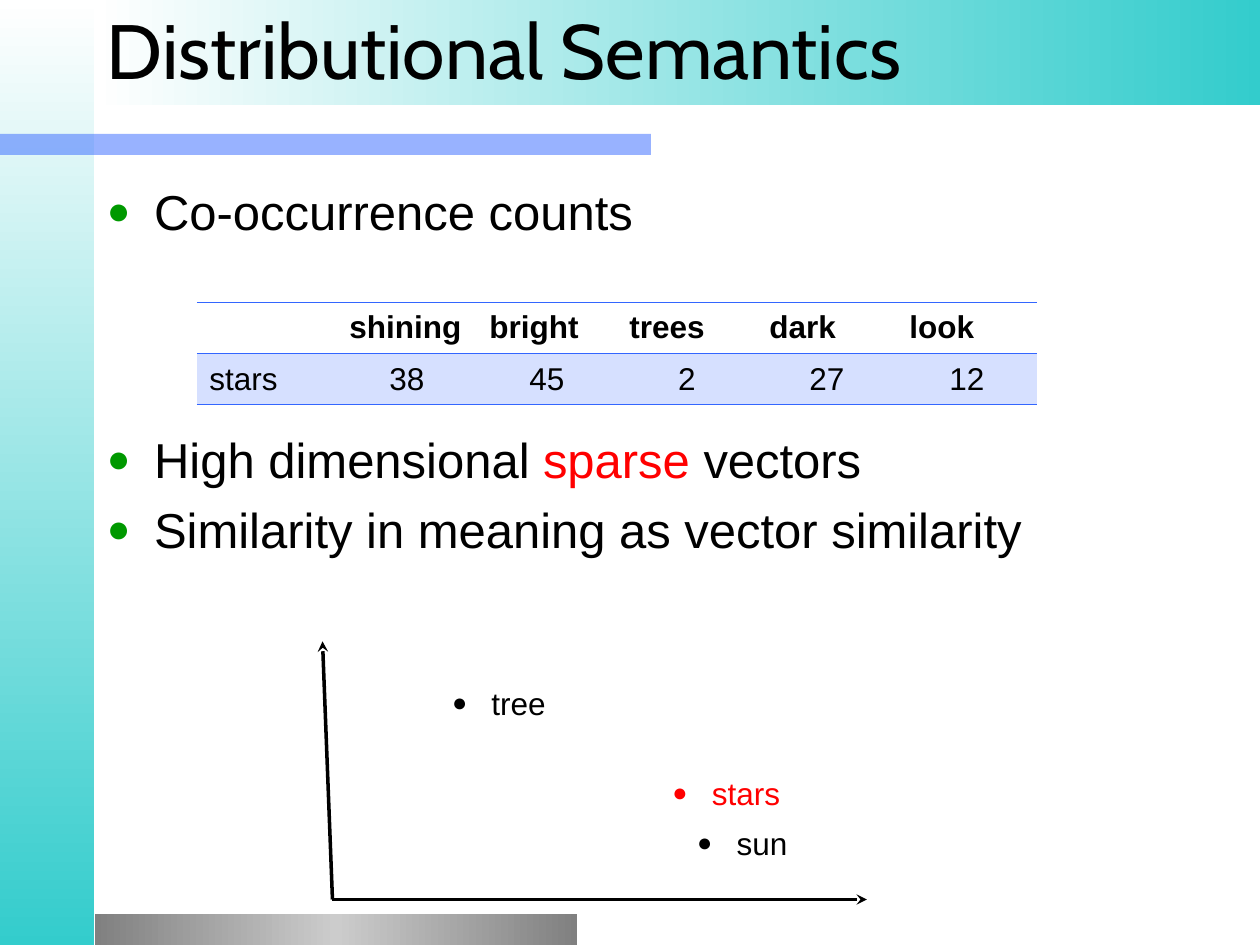
from copy import deepcopy

from lxml import etree
from pptx import Presentation
from pptx.dml.color import RGBColor
from pptx.enum.shapes import MSO_CONNECTOR, MSO_SHAPE
from pptx.enum.text import MSO_ANCHOR, PP_ALIGN
from pptx.oxml import parse_xml
from pptx.oxml.ns import nsdecls, qn
from pptx.util import Pt

BLACK = RGBColor(0x00, 0x00, 0x00)
WHITE = RGBColor(0xFF, 0xFF, 0xFF)
RED = RGBColor(0xFF, 0x00, 0x00)
GREEN = RGBColor(0x00, 0x99, 0x00)
TEAL = RGBColor(0x33, 0xCC, 0xCC)
BLUE = RGBColor(0x33, 0x66, 0xFF)
PALE_BLUE = RGBColor(0xD6, 0xE0, 0xFF)
GREY = RGBColor(0x80, 0x80, 0x80)
LIGHT_GREY = RGBColor(0xCC, 0xCC, 0xCC)


def write(p, runs, size=18, font="Arial", color=BLACK, bold=False,
          align=PP_ALIGN.LEFT, before=0, bullet=None, indent=0):
    """Fill a paragraph with a string or with (text, colour) runs."""
    p.alignment = align
    p.space_before = Pt(before)
    for text, c in [(runs, color)] if isinstance(runs, str) else runs:
        r = p.add_run()
        r.text = text
        r.font.size, r.font.name, r.font.bold = Pt(size), font, bold
        r.font.color.rgb = c
    if bullet is not None:
        pPr = p._p.get_or_add_pPr()
        pPr.set("marL", str(Pt(indent)))
        pPr.set("indent", str(-Pt(indent)))
        clr = etree.SubElement(pPr, qn("a:buClr"))
        etree.SubElement(clr, qn("a:srgbClr"), val=str(bullet))
        etree.SubElement(pPr, qn("a:buSzPct"), val="80000")
        etree.SubElement(pPr, qn("a:buFont"), typeface="Arial")
        etree.SubElement(pPr, qn("a:buChar"), char="●")


def add_box(x, y, w, h, anchor=MSO_ANCHOR.TOP):
    tf = s.shapes.add_textbox(Pt(x), Pt(y), Pt(w), Pt(h)).text_frame
    tf.word_wrap = True
    tf.vertical_anchor = anchor
    return tf


prs = Presentation()
prs.slide_width, prs.slide_height = Pt(720), Pt(540)
s = prs.slides.add_slide(prs.slide_layouts[6])

# Background bands: place, gradient colours, angle (one colour means plain)
bands = [
    (0, 0, 54, 540, [WHITE, TEAL], 270),
    (0, 76.5, 372, 12, [BLUE], 0),
    (54, 522, 276, 18, [GREY, LIGHT_GREY, GREY], 0),
    (54, 0, 666, 60, [WHITE, TEAL], 0),
]
for x, y, w, h, colors, angle in bands:
    sp = s.shapes.add_shape(MSO_SHAPE.RECTANGLE, Pt(x), Pt(y), Pt(w), Pt(h))
    sp.shadow.inherit = False
    sp.line.fill.background()
    if len(colors) == 1:
        sp.fill.solid()
        sp.fill.fore_color.rgb = colors[0]
        clr = sp._element.spPr.find(".//" + qn("a:srgbClr"))
        etree.SubElement(clr, qn("a:alpha"), val="50000")
        continue
    sp.fill.gradient()
    sp.fill.gradient_angle = angle
    if len(colors) == 3:
        gs_list = sp._element.spPr.find(".//" + qn("a:gsLst"))
        gs_list.insert(1, deepcopy(gs_list[0]))
    for i, (stop, color) in enumerate(zip(sp.fill.gradient_stops, colors)):
        stop.position = i / (len(colors) - 1)
        stop.color.rgb = color

# Title
tf = add_box(54, -2, 666, 60, MSO_ANCHOR.MIDDLE)
write(tf.paragraphs[0], "Distributional Semantics", size=44, font="Cabin")

# Main points, with room for the table after the first
tf = add_box(54, 100, 612, 415)
points = [
    ("Co-occurrence counts", 3),
    ([("High dimensional ", BLACK), ("sparse", RED), (" vectors", BLACK)], 108),
    ("Similarity in meaning as vector similarity", 6.7),
]
for i, (runs, before) in enumerate(points):
    p = tf.add_paragraph() if i else tf.paragraphs[0]
    write(p, runs, size=28, before=before, bullet=GREEN, indent=27)

# Co-occurrence table
rows = [
    ["", "shining", "bright", "trees", "dark", "look"],
    ["stars", "38", "45", "2", "27", "12"],
]
table = s.shapes.add_table(2, 6, Pt(112.5), Pt(172.8), Pt(480), Pt(58.4)).table
table.horz_banding = False
for i, row in enumerate(rows):
    for j, text in enumerate(row):
        cell = table.cell(i, j)
        cell.vertical_anchor = MSO_ANCHOR.MIDDLE
        centred = i == 1 and j > 0
        write(cell.text_frame.paragraphs[0], text, bold=i == 0,
              align=PP_ALIGN.CENTER if centred else PP_ALIGN.LEFT)
        tcPr = cell._tc.get_or_add_tcPr()
        for side in ("L", "R", "T", "B"):
            fill = "<a:noFill/>"
            if side in "TB":
                fill = f'<a:solidFill><a:srgbClr val="{BLUE}"/></a:solidFill>'
            tcPr.append(parse_xml(
                f'<a:ln{side} {nsdecls("a")} w="{Pt(1)}">{fill}</a:ln{side}>'))
        if i == 0:
            cell.fill.background()
        else:
            cell.fill.solid()
            cell.fill.fore_color.rgb = PALE_BLUE

# Axes of the vector space
for x, y in [(184.3, 366.5), (495.4, 514)]:
    axis = s.shapes.add_connector(
        MSO_CONNECTOR.STRAIGHT, Pt(190), Pt(514), Pt(x), Pt(y))
    axis.line.width = Pt(2)
    axis.line.color.rgb = BLACK
    etree.SubElement(axis.line._get_or_add_ln(), qn("a:tailEnd"), type="stealth")
    etree.SubElement(axis._element.spPr, qn("a:effectLst"))

# Words as points in the space
words = [
    ("tree", 251.3, 387.5, 81, BLACK),
    ("sun", 391.3, 467.5, 76, BLACK),
    ("stars", 377.2, 438.5, 91, RED),
]
for text, x, y, w, color in words:
    tf = add_box(x, y, w, 29)
    write(tf.paragraphs[0], text, color=color, bullet=color, indent=22.5)

prs.save("out.pptx")
